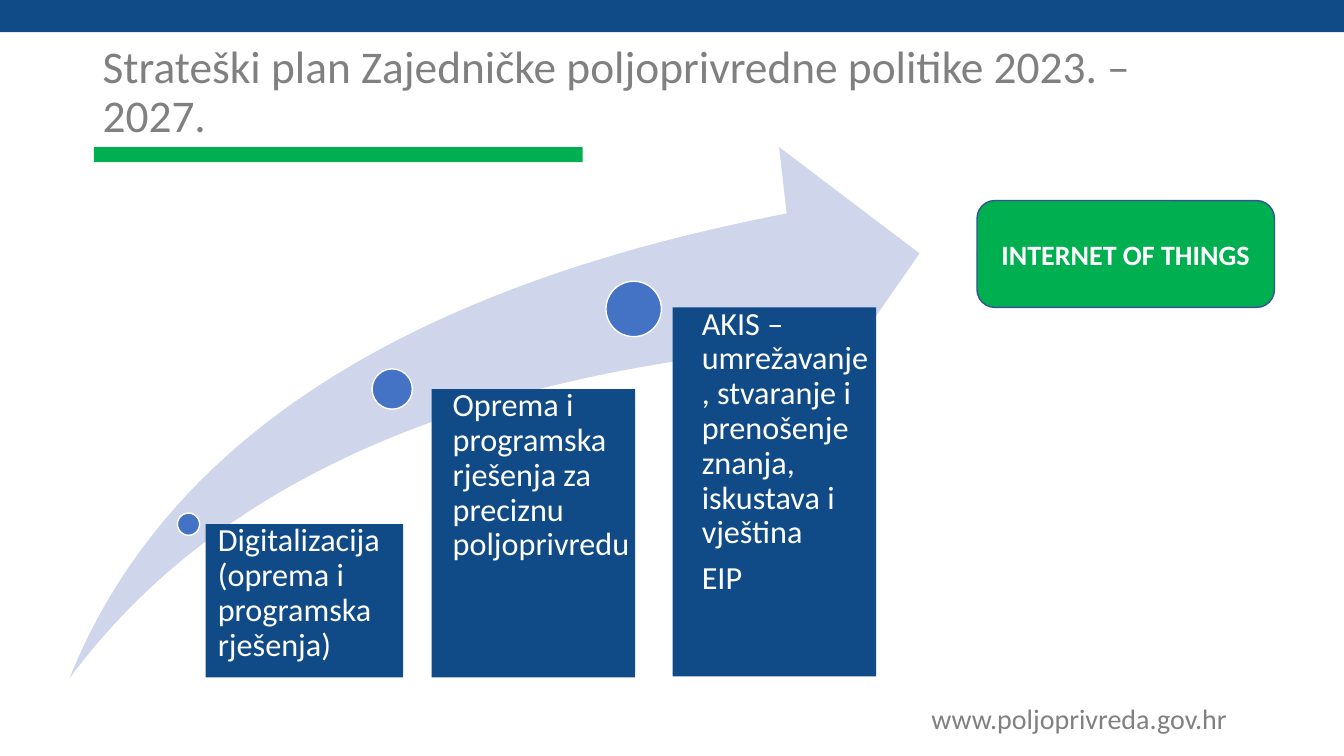
import pptx
import pptx.util
import pptx.dml.color
import pptx.enum.shapes
import pptx.enum.text

Inches = pptx.util.Inches
Pt = pptx.util.Pt
RGBColor = pptx.dml.color.RGBColor
SHAPE = pptx.enum.shapes.MSO_SHAPE
ALIGN = pptx.enum.text.PP_ALIGN
ANCHOR = pptx.enum.text.MSO_ANCHOR

NAVY = RGBColor(0x11, 0x4B, 0x87)
GREEN = RGBColor(0x00, 0xB0, 0x50)
GREY = RGBColor(0x80, 0x80, 0x80)
PALE_BLUE = RGBColor(0xCF, 0xD5, 0xEA)
BLUE = RGBColor(0x44, 0x72, 0xC4)
OUTLINE = RGBColor(0x32, 0x54, 0x91)
WHITE = RGBColor(0xFF, 0xFF, 0xFF)

# Each step: box, left text inset, (marker left, top, diameter), paragraphs
STEPS = [
    ((2.04, 5.2, 1.96, 1.52), 0.12, (1.76, 5.09, 0.22),
     ["Digitalizacija (oprema i programska rješenja)"]),
    ((4.28, 3.86, 2.02, 2.86), 0.21, (3.69, 3.66, 0.4),
     ["Oprema i programska rješenja za preciznu poljoprivredu"]),
    ((6.67, 3.05, 2.02, 3.66), 0.29, (6.01, 2.79, 0.55),
     ["AKIS – umrežavanje, stvaranje i prenošenje znanja, iskustava i vještina",
      "EIP"]),
]


def add_filled(slide, kind, box, fill, outline=None):
    shape = slide.shapes.add_shape(kind, *map(Inches, box))
    shape.shadow.inherit = False
    shape.fill.solid()
    shape.fill.fore_color.rgb = fill
    if outline is None:
        shape.line.fill.background()
    else:
        shape.line.color.rgb = outline
        shape.line.width = Pt(1)
    return shape


def write(frame, paragraphs, size, color, bold=False, frame_format=None, **paragraph_format):
    """Fill a text frame, applying the given frame and paragraph attributes."""
    for name, value in {"word_wrap": True, **(frame_format or {})}.items():
        setattr(frame, name, value)
    for index, words in enumerate(paragraphs):
        paragraph = frame.add_paragraph() if index else frame.paragraphs[0]
        for name, value in {"alignment": ALIGN.LEFT, **paragraph_format}.items():
            setattr(paragraph, name, value)
        run = paragraph.add_run()
        run.text = words
        run.font.color.rgb = color
        for name, value in {"name": "Calibri", "size": Pt(size), "bold": bold}.items():
            setattr(run.font, name, value)


def add_header(slide, box):
    left, top, width, height = box
    add_filled(slide, SHAPE.RECTANGLE, (0, 0, 13.33, 0.32), NAVY)
    add_filled(slide, SHAPE.RECTANGLE, (left + 0.01, top + height, 4.85, 0.15), GREEN)
    title = slide.shapes.add_textbox(*map(Inches, box))
    write(title.text_frame,
          ["Strateški plan Zajedničke poljoprivredne politike 2023. – 2027."],
          32.4, GREY, line_spacing=0.9,
          frame_format={"vertical_anchor": ANCHOR.MIDDLE, "margin_right": Inches(0.3)})


def add_step(slide, box, inset, marker, paragraphs):
    left, top, diameter = marker
    add_filled(slide, SHAPE.OVAL, (left, top, diameter, diameter), BLUE, WHITE)
    step = add_filled(slide, SHAPE.RECTANGLE, box, NAVY)
    margins = {"margin_left": Inches(inset), "margin_top": 0,
               "margin_right": 0, "margin_bottom": 0}
    write(step.text_frame, paragraphs, 23, WHITE, line_spacing=0.9, space_after=Pt(8),
          frame_format={"vertical_anchor": ANCHOR.TOP, **margins})


def add_growth_path(slide, box):
    arrow = add_filled(slide, SHAPE.SWOOSH_ARROW, box, PALE_BLUE)
    for index in range(2):
        arrow.adjustments[index] = 0.25
    for step in STEPS:
        add_step(slide, *step)


def add_goal(slide, box):
    goal = add_filled(slide, SHAPE.ROUNDED_RECTANGLE, box, GREEN, OUTLINE)
    write(goal.text_frame, ["INTERNET OF THINGS"], 20, WHITE, bold=True,
          alignment=ALIGN.CENTER, frame_format={"vertical_anchor": ANCHOR.MIDDLE})


def add_footer(slide, box):
    address = slide.shapes.add_textbox(*map(Inches, box))
    write(address.text_frame, ["www.poljoprivreda.gov.hr"], 20, GREY)


def main():
    deck = pptx.Presentation()
    deck.slide_width, deck.slide_height = Inches(13.33), Inches(7.5)
    slide = deck.slides.add_slide(deck.slide_layouts[6])
    add_header(slide, (0.92, 0.4, 11.5, 1.06))
    add_footer(slide, (9.14, 6.91, 3.28, 0.44))
    add_growth_path(slide, (0.69, 1.46, 8.43, 5.27))
    add_goal(slide, (9.69, 1.99, 2.95, 1.06))
    deck.save("out.pptx")


if __name__ == "__main__":
    main()
